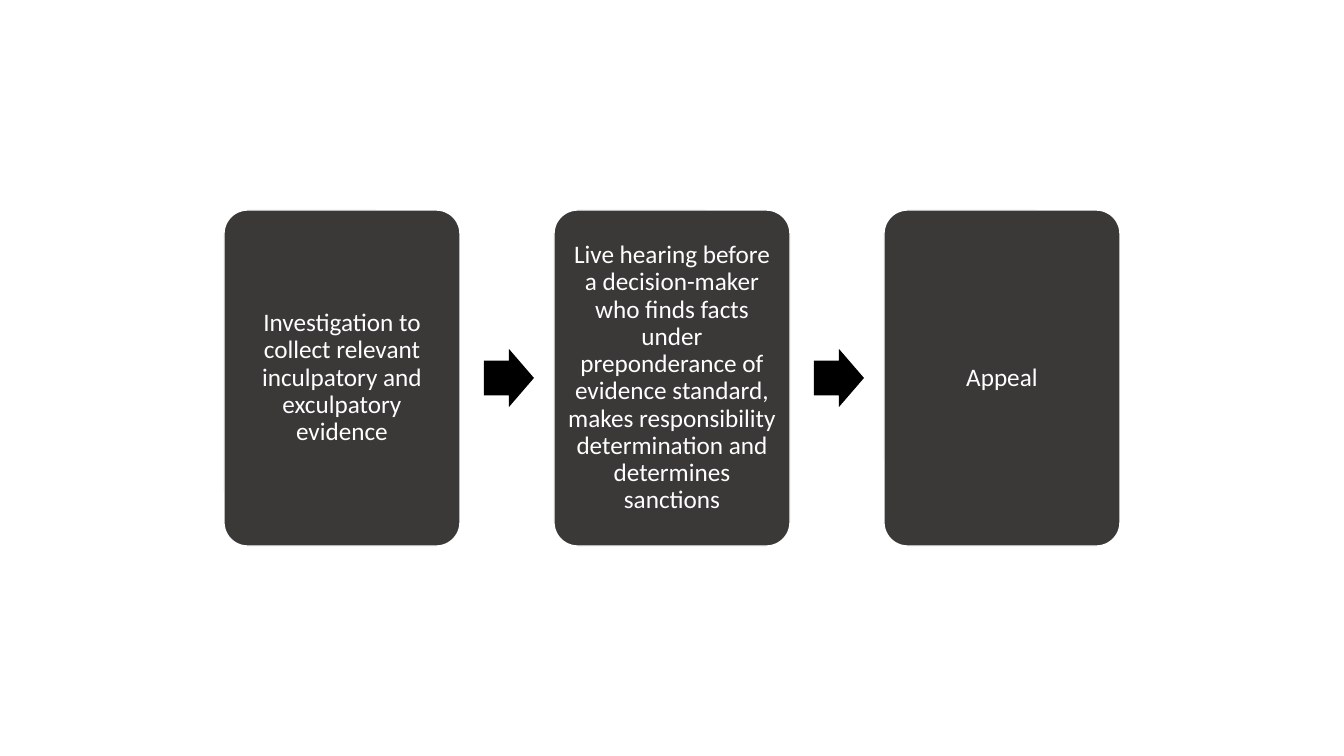
from pptx import Presentation
from pptx import util as u
from pptx.dml.color import RGBColor
from pptx.enum import shapes, text

PX = 914400 / 100.8  # EMU per px
COLORS = {"card": "3B3838", "arrow": "000000", "white": "FFFFFF"}


def px(n):
    return u.Emu(round(n * PX))


def write(shape, words, size=18, font="Calibri", color="white", inset=7):
    frame = shape.text_frame
    frame.word_wrap = True
    frame.vertical_anchor = text.MSO_ANCHOR.MIDDLE
    frame.margin_left = frame.margin_right = px(inset)
    frame.margin_top = frame.margin_bottom = px(inset)
    paragraph = frame.paragraphs[0]
    paragraph.alignment = text.PP_ALIGN.CENTER
    paragraph.line_spacing = 0.9
    run = paragraph.add_run()
    run.text = words
    run.font.size = u.Pt(size)
    run.font.name = font
    run.font.color.rgb = RGBColor.from_string(COLORS[color])


prs = Presentation()
prs.slide_width, prs.slide_height = px(1344), px(756)
slide = prs.slides.add_slide(prs.slide_layouts[6])

STEPS = [
    "Investigation to collect relevant inculpatory and exculpatory evidence",
    "Live hearing before a decision-maker who finds facts under preponderance "
    "of evidence standard, makes responsibility determination and determines sanctions",
    "Appeal",
]
LEFT, PITCH, MIDDLE = 224, 330, 378
CARD_W, CARD_H = 236, 336
ARROW_W, ARROW_H, ARROW_OFFSET = 50, 58, 260

for i, step in enumerate(STEPS):
    left = LEFT + i * PITCH

    # Step card
    card = slide.shapes.add_shape(
        shapes.MSO_SHAPE.ROUNDED_RECTANGLE,
        px(left), px(MIDDLE - CARD_H / 2), px(CARD_W), px(CARD_H))
    card.adjustments[0] = 0.1
    card.shadow.inherit = False
    card.fill.solid()
    card.fill.fore_color.rgb = RGBColor.from_string(COLORS["card"])
    card.line.color.rgb = RGBColor.from_string(COLORS["white"])
    card.line.width = u.Pt(1)
    write(card, step)

    # Arrow to the next step
    if i < len(STEPS) - 1:
        arrow = slide.shapes.add_shape(
            shapes.MSO_SHAPE.RIGHT_ARROW,
            px(left + ARROW_OFFSET), px(MIDDLE - ARROW_H / 2), px(ARROW_W), px(ARROW_H))
        arrow.adjustments[0] = 0.6
        arrow.adjustments[1] = 0.5
        arrow.shadow.inherit = False
        arrow.fill.solid()
        arrow.fill.fore_color.rgb = RGBColor.from_string(COLORS["arrow"])
        arrow.line.fill.background()

prs.save("out.pptx")
